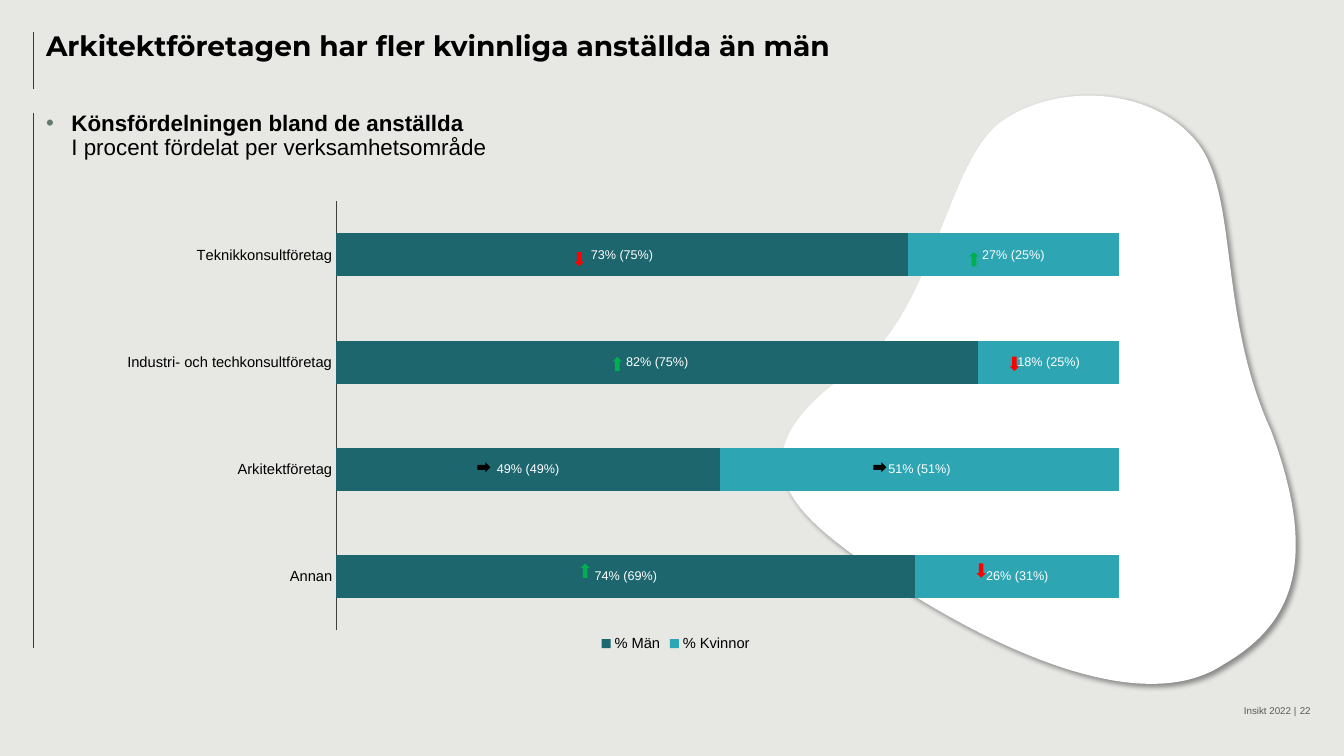
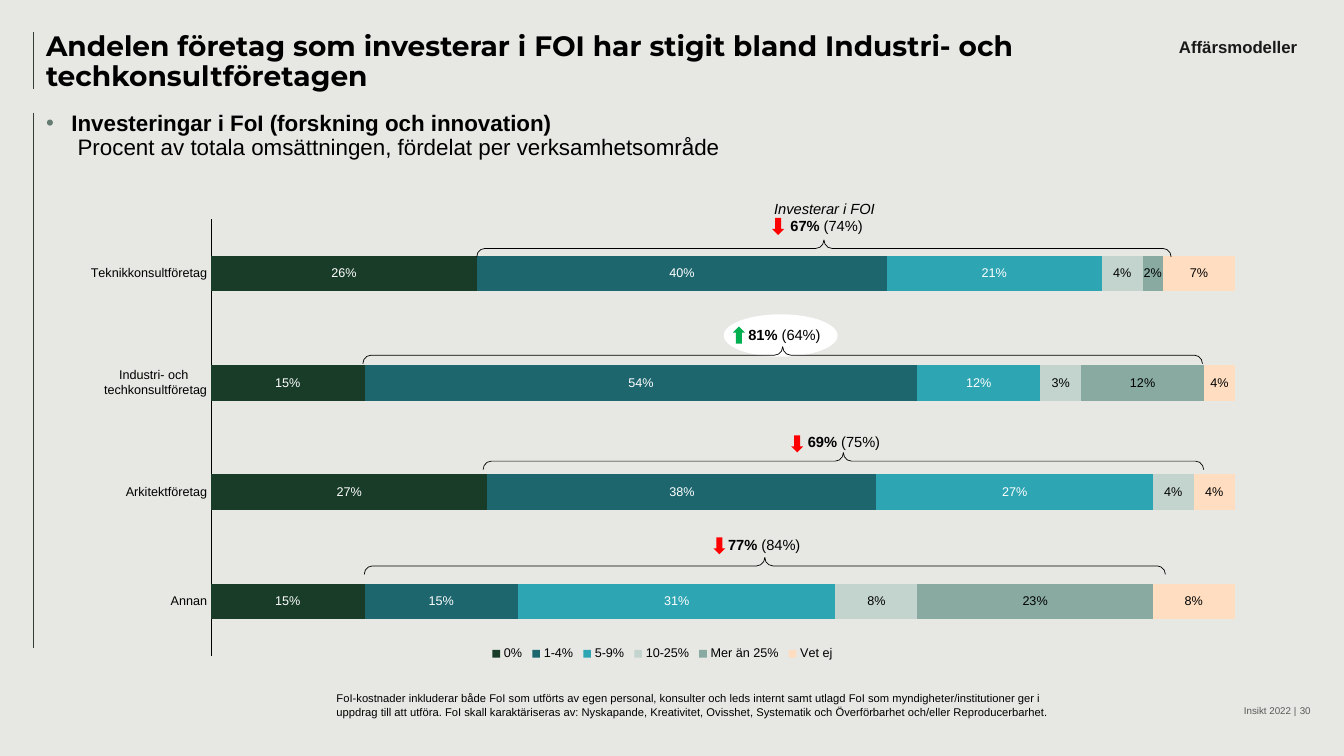
import math

from lxml import etree
from pptx import Presentation
from pptx.chart.data import CategoryChartData
from pptx.dml.color import RGBColor
from pptx.enum import chart as ch, shapes, text
from pptx.oxml import parse_xml
from pptx.oxml.ns import nsdecls, qn
from pptx.util import Cm, Pt

# Shared look (lengths in centimetres)
BACKGROUND, RULE, BULLET = "E7E8E4", "323E39", "657B71"
BLACK, WHITE, GREY = "000000", "FFFFFF", "595959"
TEAL, TURQUOISE = "1D666E", "2EA5B3"
BODY_FONT, TITLE_FONT = "Arial", "Montserrat"
RULES = [(0.81, 2.24), (2.84, 16.34)]
ARROWS = {"up": (180, "00B050"), "down": (0, "FF0000"), "same": (270, BLACK)}

# Slide content
GENDER = {
    "title": "Arkitektföretagen har fler kvinnliga anställda än män",
    "title_width": 31.88,
    "lead": "Könsfördelningen bland de anställda",
    "detail": "I procent fördelat per verksamhetsområde",
    "body_size": (25.53, 1.32),
    "page": "22",
}
GENDER_CHART = {
    "box": (2.69, 4.83, 26.06, 12.12),
    "plot": (0.222, 0.02, 0.757, 0.892), "legend": (0.474, 0.914),
    "cats": ["Teknikkonsultföretag", "Industri- och techkonsultföretag",
             "Arkitektföretag", "Annan"],
    "series": [("% Män", [73, 82, 49, 74], TEAL, WHITE),
               ("% Kvinnor", [27, 18, 51, 26], TURQUOISE, WHITE)],
    "own_labels": [["73% (75%)", "82% (75%)", "49% (49%)", "74% (69%)"],
                   ["27% (25%)", "18% (25%)", "51% (51%)", "26% (31%)"]],
    "format": "0", "max": 100, "gap": 150, "size": 10.5, "axis": "3E3E3E",
}
GENDER_ARROWS = [  # row top, (kind, left) for men and for women
    (6.35, ("down", 14.48), ("up", 24.43)),
    (8.99, ("up", 15.44), ("down", 25.45)),
    (11.61, ("same", 12.07), ("same", 22.05)),
    (14.2, ("up", 14.63), ("down", 24.61)),
]
BLOB_BOX, BLOB_TURN = (19.28, 4.04, 14.68, 13.34), 60.1
BLOB_START = (25.3, 3.02)
BLOB_CURVES = [  # two control points and an end point, as seen on the slide
    ((26.7, 2.08), (29.01, 2.21), (30.12, 3.53)),
    ((31.24, 4.83), (30.66, 7.85), (32.03, 10.85)),
    ((33.32, 14.3), (32.46, 15.8), (30.84, 16.74)),
    ((28.07, 18.59), (22.35, 14.73), (20.83, 13.46)),
    ((19.33, 12.19), (19.05, 10.92), (21.72, 9.17)),
    ((23.6, 7.59), (23.88, 3.96), (25.3, 3.02)),
]

RESEARCH = {
    "title": "Andelen företag som investerar i FOI har stigit bland "
             "Industri- och techkonsultföretagen",
    "title_width": 25.78,
    "lead": "Investeringar i FoI (forskning och innovation)",
    "detail": " Procent av totala omsättningen, fördelat per verksamhetsområde",
    "body_size": (18.85, 1.5),
    "page": "30",
}
RESEARCH_CHART = {
    "box": (1.65, 5.26, 30.07, 12.27),
    "plot": (0.122, 0.021, 0.858, 0.898), "legend": (0.353, 0.894, 0.295, 0.04),
    "cats": ["Teknikkonsultföretag", "Industri- och \ntechkonsultföretag",
             "Arkitektföretag", "Annan"],
    "series": [("0%", [0.26, 0.15, 0.27, 0.15], "193C29", WHITE),
               ("1-4%", [0.4, 0.54, 0.38, 0.15], TEAL, WHITE),
               ("5-9%", [0.21, 0.12, 0.27, 0.31], TURQUOISE, WHITE),
               ("10-25%", [0.04, 0.04, 0.04, 0.08], "C3D4CF", BLACK),
               ("Mer än 25%", [0.02, 0.12, 0, 0.23], "88AAA0", BLACK),
               ("Vet ej", [0.07, 0.04, 0.04, 0.08], "FEDDC1", BLACK)],
    "own_labels": [[], [], [], [None, "3%"]],
    "format": "0%;;", "max": 1, "gap": 207, "size": 9, "axis": BLACK,
}
INVESTORS = [  # share, earlier share, label box, arrow, brace centre and length
    ("67%", "(74%)", (19.23, 4.9, 3.1, 1.14), ("down", 19.46, 5.49), (20.76, 6.26, 17.5)),
    ("81%", "(64%)", (18.49, 8.08, 2.46, 0.71), ("up", 18.47, 8.23), (19.72, 8.95, 21.16)),
    ("69%", "(75%)", (19.99, 10.77, 2.46, 0.71), ("down", 19.94, 10.97), (21.25, 11.62, 18.16)),
    ("77%", "(84%)", (17.98, 13.39, 2.46, 0.71), ("down", 17.98, 13.54), (19.27, 14.26, 20.19)),
]
SECTION = "Affärsmodeller"
FOOTNOTE = ("FoI-kostnader inkluderar både FoI som utförts av egen personal, konsulter och "
            "leds internt samt utlagd FoI som myndigheter/institutioner ger i uppdrag till "
            "att utföra. FoI skall karaktäriseras av: Nyskapande, Kreativitet, Ovisshet, "
            "Systematik och Överförbarhet och/eller Reproducerbarhet.")


def rgb(value):
    return RGBColor.from_string(value)


def cm(values):
    return [Cm(v) for v in values]


def style(font, size, color=BLACK, name=BODY_FONT, bold=False, italic=False):
    font.size, font.name, font.bold, font.italic = Pt(size), name, bold, italic
    font.color.rgb = rgb(color)


def add_runs(p, runs, size, **common):
    for words, extra in runs:
        if words == "\n":
            p.add_line_break()
            continue
        r = p.add_run()
        r.text = words
        style(r.font, size, **{**common, **extra})


def flush(tf):
    tf.margin_left = tf.margin_right = tf.margin_top = tf.margin_bottom = 0
    tf.auto_size = text.MSO_AUTO_SIZE.NONE


def text_box(s, box, runs, size, align=text.PP_ALIGN.LEFT, wrap=True, **common):
    tf = s.shapes.add_textbox(*cm(box)).text_frame
    tf.word_wrap, tf.auto_size = wrap, text.MSO_AUTO_SIZE.SHAPE_TO_FIT_TEXT
    tf.paragraphs[0].alignment = align
    add_runs(tf.paragraphs[0], runs, size, **common)
    return tf


def fill_placeholder(sp, box, runs, size, bullet=False, **common):
    sp.left, sp.top, sp.width, sp.height = cm(box)
    tf = sp.text_frame
    flush(tf)
    tf.word_wrap = True
    tf.vertical_anchor = text.MSO_ANCHOR.TOP
    p = tf.paragraphs[0]
    if bullet:
        pPr = p._p.get_or_add_pPr()
        pPr.set("marL", str(Cm(0.64)))
        pPr.set("indent", str(-Cm(0.64)))
        color = etree.SubElement(pPr, qn("a:buClr"))
        etree.SubElement(color, qn("a:srgbClr"), val=BULLET)
        etree.SubElement(pPr, qn("a:buFont"), typeface=BODY_FONT)
        etree.SubElement(pPr, qn("a:buChar"), char="•")
    p.alignment = text.PP_ALIGN.LEFT
    p.line_spacing, p.space_before = 0.9, Pt(0)
    add_runs(p, runs, size, **common)


def plain_shape(s, kind, box, fill):
    sp = s.shapes.add_shape(kind, *cm(box))
    sp.shadow.inherit = False
    sp.fill.solid()
    sp.fill.fore_color.rgb = rgb(fill)
    sp.line.fill.background()
    return sp


def arrow(s, kind, *box):
    turn, color = ARROWS[kind]
    plain_shape(s, shapes.MSO_SHAPE.DOWN_ARROW, box, color).rotation = turn


def layout_rules(s):
    """Draw the left-hand rules and hand them to the layout the slides share."""
    for i, (top, bottom) in enumerate(RULES):
        ln = s.shapes.add_connector(shapes.MSO_CONNECTOR.STRAIGHT,
                                    *cm((0.84, top, 0.84, bottom)))
        ln.line.color.rgb, ln.line.width = rgb(RULE), Pt(0.5)
        etree.SubElement(ln._element.spPr, qn("a:effectLst"))
        ln._element.nvCxnSpPr.cNvPr.set("id", str(20 + i))
        s.slide_layout.shapes.element.append(ln._element)


def base_slide(prs, content):
    s = prs.slides.add_slide(prs.slide_layouts[1])
    # Title and lead text
    fill_placeholder(s.shapes.title, (1.16, 0.81, content["title_width"], 1.42),
                     [(content["title"], {})], 20, name=TITLE_FONT, bold=True)
    fill_placeholder(s.placeholders[1], (1.16, 2.83, *content["body_size"]),
                     [(content["lead"], {"bold": True}), ("\n", {}),
                      (content["detail"], {})], 16, bullet=True)
    # Footer
    for words, left, width in (("Insikt 2022 |", 21.24, 11.43), (content["page"], 25.41, 7.62)):
        tf = text_box(s, (left, 17.6, width, 0.46), [(words, {})], 7,
                      text.PP_ALIGN.RIGHT, color=GREY)
        flush(tf)
        tf.vertical_anchor = text.MSO_ANCHOR.BOTTOM
    return s


def place(parent, index, values, inner=False):
    for old in parent.findall(qn("c:layout")):
        parent.remove(old)
    layout = parse_xml(f"<c:layout {nsdecls('c')}><c:manualLayout/></c:layout>")
    manual = layout[0]
    if inner:
        etree.SubElement(manual, qn("c:layoutTarget"), val="inner")
    for tag in ("xMode", "yMode"):
        etree.SubElement(manual, qn("c:" + tag), val="edge")
    for tag, value in zip("xywh", values):
        etree.SubElement(manual, qn("c:" + tag), val=str(value))
    parent.insert(index, layout)


def stacked_bars(s, spec):
    data = CategoryChartData(number_format=spec["format"])
    data.categories = spec["cats"]
    for name, values, *_ in spec["series"]:
        data.add_series(name, values)
    chart = s.shapes.add_chart(ch.XL_CHART_TYPE.BAR_STACKED, *cm(spec["box"]), data).chart
    style(chart.font, 10)
    chart.has_title = False
    # Axes
    cat, val = chart.category_axis, chart.value_axis
    cat.reverse_order = True
    cat.major_tick_mark = cat.minor_tick_mark = ch.XL_TICK_MARK.NONE
    cat.format.line.color.rgb, cat.format.line.width = rgb(spec["axis"]), Pt(0.75)
    style(cat.tick_labels.font, spec["size"])
    val.minimum_scale, val.maximum_scale = 0, spec["max"]
    val.has_major_gridlines = val.visible = False
    # Legend and placing
    chart.has_legend = True
    chart.legend.position = ch.XL_LEGEND_POSITION.BOTTOM
    chart.legend.include_in_layout = False
    style(chart.legend.font, spec["size"])
    place(chart.element.find(".//" + qn("c:plotArea")), 0, spec["plot"], inner=True)
    place(chart.element.find(".//" + qn("c:legend")), 1, spec["legend"])
    # Bars and labels
    plot = chart.plots[0]
    plot.gap_width, plot.overlap, plot.vary_by_categories = spec["gap"], 100, False
    for ser, (_, _, fill, color) in zip(plot.series, spec["series"]):
        ser.format.fill.solid()
        ser.format.fill.fore_color.rgb = rgb(fill)
        labels = ser.data_labels
        labels.show_value, labels.position = True, ch.XL_LABEL_POSITION.CENTER
        labels.number_format, labels.number_format_is_linked = spec["format"], False
        style(labels.font, 9, color)
    for ser, (*_, color), own in zip(plot.series, spec["series"], spec["own_labels"]):
        for i, words in enumerate(own):
            if words:
                label = ser.points[i].data_label
                add_runs(label.text_frame.paragraphs[0], [(words, {})], 9, color=color)
                label.position = ch.XL_LABEL_POSITION.CENTER


def blob(s):
    left, top, width, height = BLOB_BOX
    cos, sin = math.cos(math.radians(BLOB_TURN)), math.sin(math.radians(BLOB_TURN))

    def local_point(parent, point):
        dx, dy = point[0] - left - width / 2, point[1] - top - height / 2
        x, y = dx * cos + dy * sin + width / 2, dy * cos - dx * sin + height / 2
        etree.SubElement(parent, qn("a:pt"), x=str(Cm(x)), y=str(Cm(y)))

    # The frame comes first, then its outline becomes curves
    builder = s.shapes.build_freeform(Cm(left), Cm(top))
    builder.add_line_segments([cm((left + width, top + height))], close=True)
    sp = builder.convert_to_shape()
    outline = sp._element.spPr.find(".//" + qn("a:path"))
    for part in list(outline):
        outline.remove(part)
    local_point(etree.SubElement(outline, qn("a:moveTo")), BLOB_START)
    for curve in BLOB_CURVES:
        bend = etree.SubElement(outline, qn("a:cubicBezTo"))
        for point in curve:
            local_point(bend, point)
    etree.SubElement(outline, qn("a:close"))
    sp.rotation = BLOB_TURN
    sp.fill.solid()
    sp.fill.fore_color.rgb = rgb(WHITE)
    sp.line.fill.background()
    sp._element.spPr.append(parse_xml(
        f'<a:effectLst {nsdecls("a")}><a:outerShdw blurRad="{Pt(4)}" dist="{Pt(3)}" '
        f'dir="2700000" algn="tl" rotWithShape="0"><a:srgbClr val="{BLACK}">'
        '<a:alpha val="40000"/></a:srgbClr></a:outerShdw></a:effectLst>'))


def gender_slide(prs):
    s = base_slide(prs, GENDER)
    layout_rules(s)
    blob(s)
    stacked_bars(s, GENDER_CHART)
    for top, *pair in GENDER_ARROWS:
        for kind, left in pair:
            arrow(s, kind, left, top, *((0.25, 0.33) if kind == "same" else (0.23, 0.36)))


def research_slide(prs):
    s = base_slide(prs, RESEARCH)
    plain_shape(s, shapes.MSO_SHAPE.OVAL, (18.24, 7.92, 2.87, 1.07), WHITE)
    stacked_bars(s, RESEARCH_CHART)
    text_box(s, (29.39, 0.81, 3.63, 0.76), [(SECTION, {})], 12,
             text.PP_ALIGN.CENTER, color="191919", bold=True)
    text_box(s, (8.23, 17.3, 18.72, 0.94), [(FOOTNOTE, {})], 8)
    # Braces, shares and trend arrows
    for i, (share, earlier, box, (kind, left, top), (x, y, length)) in enumerate(INVESTORS):
        brace = s.shapes.add_shape(shapes.MSO_SHAPE.RIGHT_BRACE,
                                   *cm((x - 0.21, y - length / 2, 0.43, length)))
        brace.rotation, brace.shadow.inherit = 270, False
        brace.adjustments[0] = 0.476
        brace.fill.background()
        brace.line.color.rgb, brace.line.width = rgb(BLACK), Pt(0.5)
        heading = [("Investerar i FOI", {"italic": True}), ("\n", {})] if i == 0 else []
        text_box(s, box, heading + [(f" {share} ", {"bold": True}), (earlier, {})], 10.5,
                 text.PP_ALIGN.CENTER, wrap=False)
        arrow(s, kind, left, top, 0.3, 0.43)


def main():
    prs = Presentation()
    prs.slide_width, prs.slide_height = Cm(33.87), Cm(19.05)
    fill = prs.slide_master.background.fill
    fill.solid()
    fill.fore_color.rgb = rgb(BACKGROUND)
    gender_slide(prs)
    research_slide(prs)
    prs.save("out.pptx")


if __name__ == "__main__":
    main()
